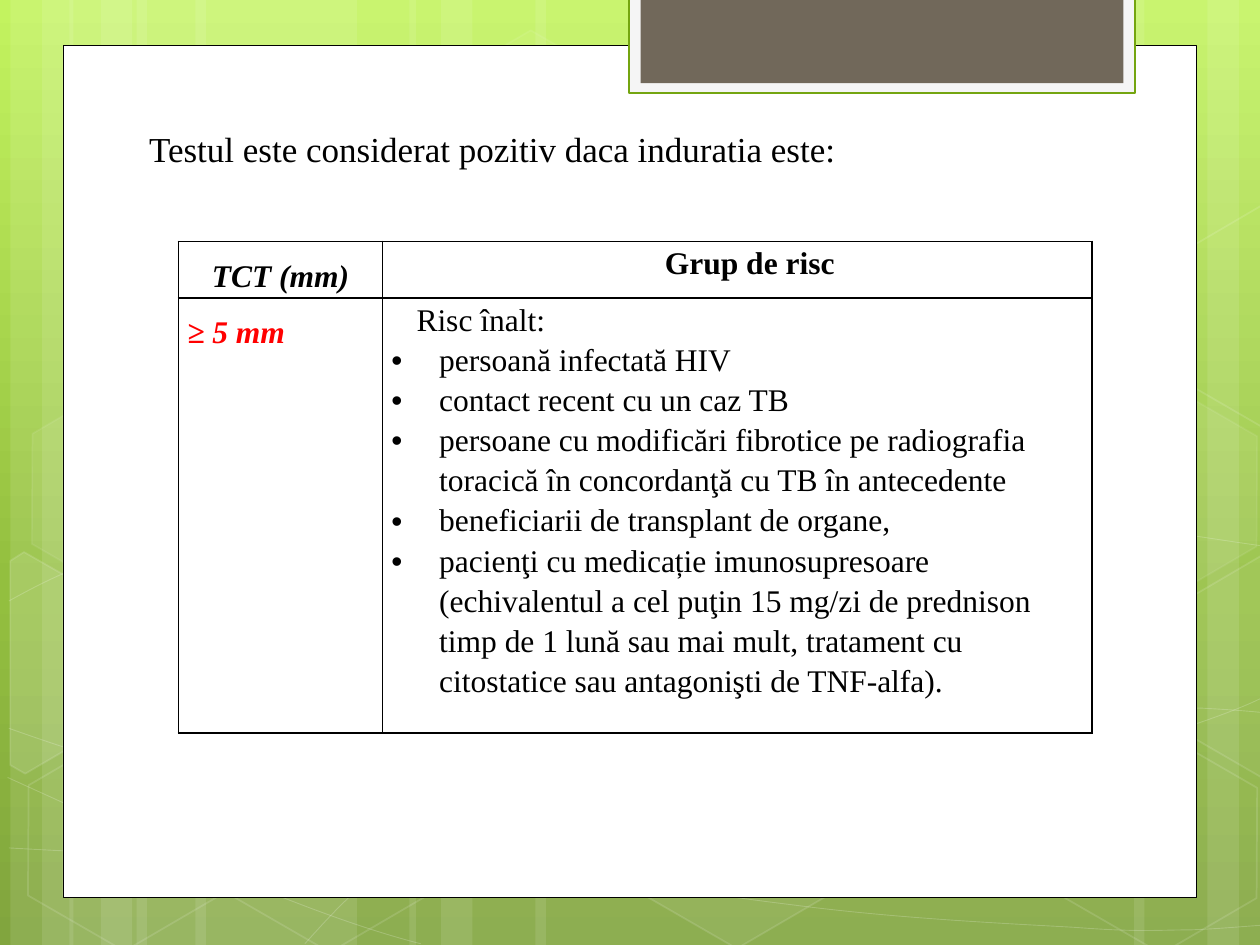
from math import cos, radians, sin

from pptx import Presentation
from pptx.dml.color import RGBColor
from pptx.enum.shapes import MSO_SHAPE
from pptx.enum.text import MSO_ANCHOR, MSO_AUTO_SIZE, PP_ALIGN
from pptx.oxml import parse_xml
from pptx.oxml.ns import nsdecls
from pptx.util import Inches, Pt

RECT, HEXAGON = MSO_SHAPE.RECTANGLE, MSO_SHAPE.HEXAGON
LEFT, CENTER, TOP = PP_ALIGN.LEFT, PP_ALIGN.CENTER, MSO_ANCHOR.TOP
FONT, BLACK, WHITE, RED = "Times New Roman", "000000", "FFFFFF", "FF0000"
W, H = 10, 7.5
GRID = 1 / 12  # inch
UNITS = 1000  # freeform units per inch
TILT = 30

GRADIENT = [(0, "C3F35F"), (62, "93BF3F"), (100, "81A53E")]
# left, width of the pale vertical bands, in grid columns
BANDS = [(13, 21), (1, 6), (4, 10), (18.6, 21), (6.6, 6), (9.6, 10),
         (88, 21), (115, 6), (108, 10), (51, 37), (39, 6), (42, 10)]
# each curve: start point, then control, control and end points in turn
CURVES = [
    [(0.07, 6.73), (0.61, 6.76), (1.15, 6.79), (1.9, 6.78), (2.65, 6.77), (3.58, 6.75),
     (4.58, 6.65), (5.58, 6.55), (7, 6.36), (7.92, 6.17), (8.83, 5.98), (9.77, 5.68),
     (10.07, 5.51)],
    [(0.07, 4.77), (0.36, 4.61), (0.65, 4.46), (1.21, 4.31), (1.78, 4.16), (2.59, 3.94),
     (3.47, 3.87), (4.36, 3.8), (5.44, 3.79), (6.54, 3.87), (7.64, 3.95), (9.47, 4.26),
     (10.07, 4.34)],
    [(0.06, 6.17), (1.27, 6.72), (2.47, 7.27), (3.34, 7.49)],
    [(0.07, 5.78), (0.38, 5.89), (0.7, 6), (1.28, 6.16), (1.86, 6.31), (2.73, 6.56),
     (3.57, 6.73), (4.4, 6.9), (5.45, 7.08), (6.28, 7.18), (7.11, 7.29), (8, 7.33),
     (8.53, 7.36), (9.05, 7.4), (9.19, 7.38), (9.45, 7.38), (9.71, 7.37), (9.89, 7.35),
     (10.07, 7.34)],
    [(2.42, 7.49), (2.6, 7.29), (2.78, 7.09), (3.02, 6.91), (3.26, 6.73), (3.6, 6.53),
     (3.88, 6.39), (4.16, 6.25), (4.33, 6.19), (4.7, 6.09), (5.06, 5.99), (5.73, 5.85),
     (6.08, 5.78), (6.44, 5.71), (6.49, 5.71), (6.8, 5.69), (7.11, 5.66), (7.6, 5.63),
     (7.94, 5.62), (8.29, 5.61), (8.86, 5.62), (8.86, 5.62), (9.08, 5.62), (9.31, 5.62),
     (9.53, 5.62), (9.71, 5.63), (9.88, 5.64), (10.06, 5.66)],
]
# left, top, fill opacity, line opacity
HEXAGONS = [(3.34, 0.36, 4, 8), (4.97, 5.89, 6, 12), (0.11, 5.91, 0, 12), (0.14, 3.12, 7, 8),
            (1.74, 5.92, 0, 12), (7.53, 4.53, 10, 12), (8.34, 5.93, 0, 12), (8.34, 3.14, 7, 8)]
# hexagons cut off by the slide edge: fill opacity, centre, points
CUT_HEXAGONS = [
    (10, (0.36, 5.35), [(0.08, 4.45), (0.19, 4.38), (0.96, 4.82), (0.95, 5.7), (0.2, 6.14),
                        (0.08, 6.07)]),
    (4, (9.85, 5.2), [(9.26, 4.85), (10.01, 4.41), (10.09, 4.46), (10.09, 6.13), (10.02, 6.17),
                      (9.26, 5.73)]),
    (0, (9.85, 2.41), [(9.26, 2.07), (10.01, 1.63), (10.1, 1.68), (10.09, 3.35), (10.02, 3.39),
                       (9.26, 2.95)]),
]
RISKS = [
    "persoană infectată HIV",
    "contact recent cu un caz TB",
    "persoane cu modificări fibrotice pe radiografia toracică în concordanţă cu TB în antecedente",
    "beneficiarii de transplant de organe,",
    "pacienţi cu medicație imunosupresoare (echivalentul a cel puţin 15 mg/zi de prednison timp "
    "de 1 lună sau mai mult, tratament cu citostatice sau antagonişti de TNF-alfa).",
]


def rgb(value):
    return RGBColor.from_string(value)


def set_alpha(sp, where, percent):
    for color in sp._element.spPr.xpath(where + "/a:srgbClr"):
        color.append(parse_xml(f'<a:alpha {nsdecls("a")} val="{percent * 1000}"/>'))


def paint(sp, fill=None, line=None, width=1, fill_alpha=100, line_alpha=100):
    sp.shadow.inherit = False
    for part, color, alpha, where in ((sp.fill, fill, fill_alpha, "a:solidFill"),
                                      (sp.line.fill, line, line_alpha, "a:ln/a:solidFill")):
        if not color or not alpha:
            part.background()
            continue
        part.solid()
        part.fore_color.rgb = rgb(color)
        if alpha < 100:
            set_alpha(sp, where, alpha)
    if line:
        sp.line.width = Pt(width)


def add_box(slide, kind, box, **look):
    sp = slide.shapes.add_shape(kind, *map(Inches, box))
    paint(sp, **look)
    return sp


def add_outline(slide, points, close, **look):
    start, *rest = [(x * UNITS, y * UNITS) for x, y in points]
    builder = slide.shapes.build_freeform(*start, scale=Inches(1) / UNITS)
    builder.add_line_segments(rest, close=close)
    sp = builder.convert_to_shape()
    paint(sp, **look)
    return sp


def bend(sp):
    """Turn every three line segments into one cubic curve."""
    lines = sp._element.spPr.xpath(".//a:lnTo")
    for i in range(0, len(lines), 3):
        curve = parse_xml(f'<a:cubicBezTo {nsdecls("a")}/>')
        lines[i].addprevious(curve)
        for line in lines[i:i + 3]:
            curve.append(line[0])
            line.getparent().remove(line)


def untilt(points, center):
    c, s, (cx, cy) = cos(radians(TILT)), sin(radians(TILT)), center
    return [(cx + (x - cx) * c + (y - cy) * s, cy - (x - cx) * s + (y - cy) * c)
            for x, y in points]


def add_backdrop(slide):
    for left, width in BANDS:
        add_box(slide, RECT, (left * GRID, 0, width * GRID, H), fill=WHITE, fill_alpha=10)
    for points in CURVES:
        bend(add_outline(slide, points, False, line=WHITE, width=0.5, line_alpha=20))
    for left, top, fill_alpha, line_alpha in HEXAGONS:
        sp = add_box(slide, HEXAGON, (left, top, 1.75, 1.52), fill=WHITE, line=WHITE,
                     fill_alpha=fill_alpha, line_alpha=line_alpha)
        sp.rotation = TILT
        sp.adjustments[0] = 0.285
    for fill_alpha, center, points in CUT_HEXAGONS:
        sp = add_outline(slide, untilt(points, center), True, fill=WHITE, line=WHITE,
                         fill_alpha=fill_alpha, line_alpha=12)
        sp.rotation = TILT


def add_panel(slide, box):
    left, top, width, _ = box
    add_box(slide, RECT, box, fill=WHITE, line=BLACK, width=0.5)
    tab = left + width - 4.51
    add_box(slide, RECT, (tab, -0.02, 4.02, 0.76), fill="F5F5F5", line="74A510", width=1.25)
    add_box(slide, RECT, (61 * GRID, -0.02, 46 * GRID, 0.68), fill="71685A")


def move_to_layout(slide):
    """Make the drawn shapes and the gradient part of the slide's layout."""
    layout = slide.slide_layout
    for sp in [s for s in slide.shapes if not s.is_placeholder]:
        sp._element.nvSpPr.cNvPr.set("id", str(sp.shape_id + 100))
        layout.shapes._spTree.append(sp._element)
    stops = "".join(f'<a:gs pos="{pos * 1000}"><a:srgbClr val="{color}"/></a:gs>'
                    for pos, color in GRADIENT)
    layout._element.cSld.insert(0, parse_xml(
        f'<p:bg {nsdecls("p", "a")}><p:bgPr><a:gradFill rotWithShape="1"><a:gsLst>{stops}</a:gsLst>'
        '<a:lin ang="5400000" scaled="0"/></a:gradFill><a:effectLst/></p:bgPr></p:bg>'))


def write(p, text, size=18, color=BLACK, spacing=1.0, align=LEFT, **style):
    p.alignment, p.line_spacing = align, spacing
    r = p.add_run()
    r.text = text
    r.font.color.rgb = rgb(color)
    for name, value in {"name": FONT, "size": Pt(size), "bold": False, "italic": False,
                        **style}.items():
        setattr(r.font, name, value)


def indent(p, margin, first, bullet=None):
    pPr = p._p.get_or_add_pPr()
    pPr.set("marL", str(Inches(margin)))
    pPr.set("indent", str(Inches(first)))
    if bullet:
        pPr.append(parse_xml(f'<a:buFont {nsdecls("a")} typeface="Arial"/>'))
        pPr.append(parse_xml(f'<a:buChar {nsdecls("a")} char="{bullet}"/>'))


def add_title(slide, box, text):
    sp = slide.shapes.title
    sp.left, sp.top, sp.width, sp.height = map(Inches, box)
    tf = sp.text_frame
    tf.word_wrap, tf.auto_size, tf.vertical_anchor = True, MSO_AUTO_SIZE.NONE, TOP
    write(tf.paragraphs[0], text, size=20)


def format_cell(cell):
    cell.margin_left = cell.margin_right = Inches(0.07)
    cell.margin_top = cell.margin_bottom = 0
    cell.vertical_anchor = TOP
    cell.fill.background()
    for i, side in enumerate("LRTB"):
        cell._tc.get_or_add_tcPr().insert(i, parse_xml(
            f'<a:ln{side} {nsdecls("a")} w="{Pt(1)}"><a:solidFill>'
            f'<a:srgbClr val="{BLACK}"/></a:solidFill></a:ln{side}>'))


def add_risk_table(slide, box):
    table = slide.shapes.add_table(2, 2, *map(Inches, box)).table
    table.first_row = table.horz_banding = False
    _, _, width, height = box
    for column, size in zip(table.columns, (1.62, width - 1.62)):
        column.width = Inches(size)
    for row, size in zip(table.rows, (0.45, height - 0.45)):
        row.height = Inches(size)
    for cell in table.iter_cells():
        format_cell(cell)
    size_head, group_head, size, group = [c.text_frame for c in table.iter_cells()]
    write(size_head.paragraphs[0], "TCT (mm)", spacing=1.5, align=CENTER, bold=True, italic=True)
    write(group_head.paragraphs[0], "Grup de risc", spacing=1.15, align=CENTER, bold=True)
    write(size.paragraphs[0], "≥ 5 mm", color=RED, spacing=1.5, bold=True, italic=True)
    write(group.paragraphs[0], "Risc înalt:", spacing=1.15)
    for tf in (group_head, group):
        indent(tf.paragraphs[0], 0, 0.2)
    for risk in RISKS:
        p = group.add_paragraph()
        write(p, risk, spacing=1.15)
        indent(p, 0.38, -0.38, "•")


prs = Presentation()
prs.slide_width, prs.slide_height = Inches(W), Inches(H)
slide = prs.slides.add_slide(prs.slide_layouts.get_by_name("Title Only"))
add_backdrop(slide)
add_panel(slide, (0.5, 0.36, 9, 6.76))
move_to_layout(slide)
add_title(slide, (13 * GRID, 0.96, 91 * GRID, 0.44),
          "Testul este considerat pozitiv daca induratia este:")
add_risk_table(slide, (17 * GRID, 23 * GRID, 87 * GRID, 3.9))
prs.save("out.pptx")
